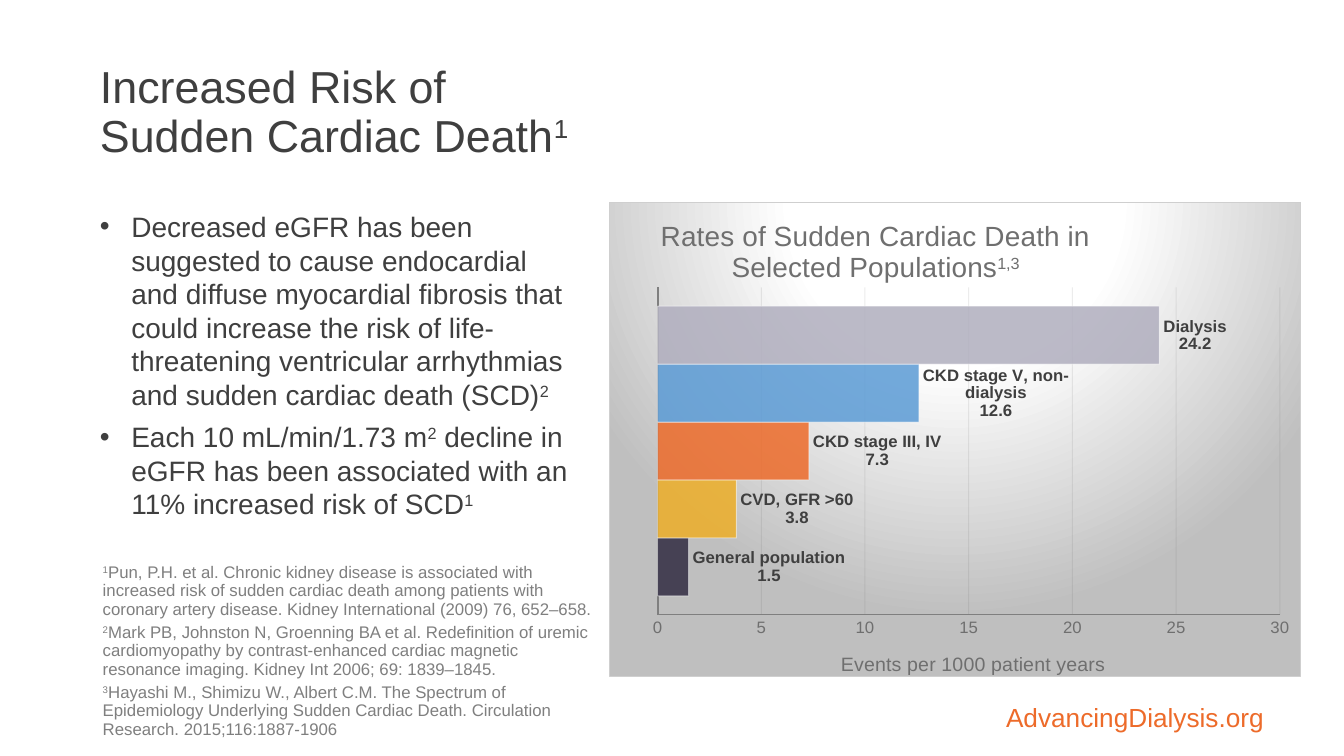
from dataclasses import dataclass

import pptx
import pptx.chart.data
import pptx.dml.color
import pptx.enum.chart
import pptx.enum.text
import pptx.oxml
import pptx.oxml.ns
import pptx.util
from lxml import etree
from pptx.util import Cm, Pt

qn = pptx.oxml.ns.qn


@dataclass(frozen=True)
class Theme:
    face: str = "Arial"
    ink: str = "3F3F3F"
    muted: str = "7F7F7F"
    axis_ink: str = "6F6F6F"
    accent: str = "ED6B2A"
    grid: str = "494949"
    frame: str = "CFCFCF"
    white: str = "FFFFFF"
    shade: str = "BFBFBF"
    title_size: float = 32
    body_size: float = 20
    site_size: float = 18.7
    axis_title_size: float = 14
    small_size: float = 12


THEME = Theme()
ALIGN = pptx.enum.text.PP_ALIGN
ANCHOR = pptx.enum.text.MSO_ANCHOR

TITLE = ["Increased Risk of\nSudden Cardiac Death^1^"]
POINTS = [
    "Decreased eGFR has been suggested to cause endocardial and diffuse myocardial fibrosis "
    "that could increase the risk of life-threatening ventricular arrhythmias and sudden "
    "cardiac death (SCD)^2^",
    "Each 10 mL/min/1.73 m^2^ decline in eGFR has been associated with an 11% increased risk "
    "of SCD^1^",
]
REFERENCES = [
    "^1^Pun, P.H. et al. Chronic kidney disease is associated with increased risk of sudden "
    "cardiac death among patients with coronary artery disease. Kidney International (2009) "
    "76, 652–658.",
    "^2^Mark PB, Johnston N, Groenning BA et al. Redefinition of uremic cardiomyopathy by "
    "contrast-enhanced cardiac magnetic resonance imaging. Kidney Int 2006; 69: 1839–1845.",
    "^3^Hayashi M., Shimizu W., Albert C.M. The Spectrum of Epidemiology Underlying Sudden "
    "Cardiac Death. Circulation Research. 2015;116:1887-1906",
]
RATES = [
    ("General population", 1.5, "312B42"),
    ("CVD, GFR >60", 3.8, "EDAE28"),
    ("CKD stage III, IV", 7.3, THEME.accent),
    ("CKD stage V, non-dialysis", 12.6, "5B9BD5"),
    ("Dialysis", 24.2, "B0AEBE"),
]


def apply(target, values):
    for name, value in values.items():
        setattr(target, name, value)


def style_font(font, size, color, bold=False):
    apply(font, {"name": THEME.face, "size": Pt(size), "bold": bold})
    font.color.rgb = pptx.dml.color.RGBColor.from_string(color)


def write_marked(paragraph, marked, size, color):
    """Write text in which ^...^ marks a superscript and a newline marks a line break."""
    for part_index, part in enumerate(marked.split("^")):
        for line_index, line in enumerate(part.split("\n")):
            if line_index:
                paragraph.add_line_break()
            if line:
                run = paragraph.add_run()
                run.text = line
                style_font(run.font, size, color)
                if part_index % 2:
                    run.font._element.set("baseline", "30000")


def add_bullet(paragraph, indent):
    properties = paragraph._p.get_or_add_pPr()
    properties.set("marL", str(indent))
    properties.set("indent", str(-indent))
    etree.SubElement(properties, qn("a:buFont")).set("typeface", THEME.face)
    etree.SubElement(properties, qn("a:buChar")).set("char", "•")


def add_text(slide, box, paragraphs, size, color, frame_format=None, paragraph_format=None,
             space_before=0, bullet_indent=None):
    frame = slide.shapes.add_textbox(*map(Cm, box)).text_frame
    apply(frame, {"word_wrap": True, "margin_left": Cm(0.18), "margin_right": Cm(0.18),
                  "margin_top": Cm(0.1), "margin_bottom": Cm(0.1), **(frame_format or {})})
    for index, marked in enumerate(paragraphs):
        paragraph = frame.add_paragraph() if index else frame.paragraphs[0]
        if bullet_indent:
            add_bullet(paragraph, bullet_indent)
        apply(paragraph, paragraph_format or {})
        if index and space_before:
            paragraph.space_before = Pt(space_before)
        write_marked(paragraph, marked, size, color)


def fill_solid(fill, color, alpha=None):
    fill.solid()
    fill.fore_color.rgb = pptx.dml.color.RGBColor.from_string(color)
    if alpha:
        rgb = fill.fore_color._xFill.find(qn("a:srgbClr"))
        etree.SubElement(rgb, qn("a:alpha")).set("val", str(alpha * 1000))


def style_line(line, color, width, alpha=None):
    line.width = Pt(width)
    fill_solid(line.fill, color, alpha)


def place(element, index, **fractions):
    """Fix a chart part at fractions of the chart's size."""
    for old in element.findall(qn("c:layout")):
        element.remove(old)
    layout = etree.Element(qn("c:layout"))
    manual = etree.SubElement(layout, qn("c:manualLayout"))
    modes = {"layoutTarget": "inner"} if "w" in fractions else {}
    modes.update(xMode="edge", yMode="edge")
    for tag, value in {**modes, **fractions}.items():
        etree.SubElement(manual, qn(f"c:{tag}")).set("val", str(value))
    element.insert(index, layout)


def shade_chart_area(chart):
    stops = "".join(
        f'<a:gs pos="{percent * 1000}"><a:srgbClr val="{color}"/></a:gs>'
        for percent, color in [(0, THEME.white), (39, THEME.white), (100, THEME.shade)])
    area = pptx.oxml.parse_xml(
        f'<c:spPr {pptx.oxml.ns.nsdecls("c", "a")}><a:gradFill><a:gsLst>{stops}</a:gsLst>'
        '<a:path path="circle"><a:fillToRect l="50000" t="-80000" r="50000" b="180000"/>'
        f'</a:path></a:gradFill><a:ln w="{Pt(0.75)}"><a:solidFill>'
        f'<a:srgbClr val="{THEME.frame}"/></a:solidFill></a:ln></c:spPr>')
    chart._chartSpace.find(qn("c:chart")).addnext(area)


def style_series(series, color):
    fill_solid(series.format.fill, color, alpha=85)
    style_line(series.format.line, THEME.white, 0.75, alpha=50)
    labels = series.data_labels
    apply(labels, {"show_value": True, "show_series_name": True,
                   "position": pptx.enum.chart.XL_LABEL_POSITION.OUTSIDE_END})
    style_font(labels.font, THEME.small_size, THEME.ink, bold=True)
    separator = etree.Element(qn("c:separator"))
    separator.text = "\n"
    labels._element.find(qn("c:showBubbleSize")).addnext(separator)


def style_axes(chart):
    no_tick = pptx.enum.chart.XL_TICK_MARK.NONE
    hidden = pptx.enum.chart.XL_TICK_LABEL_POSITION.NONE
    groups, events = chart.category_axis, chart.value_axis
    for axis, width in [(groups, 1.5), (events, 0.75)]:
        apply(axis, {"major_tick_mark": no_tick, "minor_tick_mark": no_tick})
        style_font(axis.tick_labels.font, THEME.small_size, THEME.axis_ink)
        style_line(axis.format.line, THEME.muted, width)
    apply(groups, {"tick_label_position": hidden, "has_major_gridlines": False})
    apply(events, {"minimum_scale": 0, "maximum_scale": 30, "major_unit": 5,
                   "has_major_gridlines": True})
    style_line(events.major_gridlines.format.line, THEME.grid, 0.75, alpha=10)
    write_marked(events.axis_title.text_frame.paragraphs[0], "Events per 1000 patient years",
                 THEME.axis_title_size, THEME.axis_ink)
    place(events.axis_title._element, 1, x=0.33, y=0.94)


def add_rates_chart(slide, box):
    data = pptx.chart.data.CategoryChartData()
    data.categories = ["1"]
    for population, rate, _ in RATES:
        data.add_series(population, [rate])
    chart = slide.shapes.add_chart(
        pptx.enum.chart.XL_CHART_TYPE.BAR_CLUSTERED, *map(Cm, box), data).chart
    chart.has_legend = False
    style_font(chart.font, 10, THEME.ink)
    shade_chart_area(chart)
    apply(chart.plots[0], {"gap_width": 65, "overlap": 0, "vary_by_categories": False})
    for series, (_, _, color) in zip(chart.plots[0].series, RATES):
        style_series(series, color)
    style_axes(chart)
    write_marked(chart.chart_title.text_frame.paragraphs[0],
                 "Rates of Sudden Cardiac Death in Selected Populations^1,3^",
                 THEME.body_size, THEME.axis_ink)
    place(chart.chart_title._element, 1, x=0.07, y=0.03)
    place(chart._chartSpace.find(qn("c:chart")).find(qn("c:plotArea")), 0,
          x=0.07, y=0.18, w=0.9, h=0.69)


def main():
    deck = pptx.Presentation()
    apply(deck, {"slide_width": Cm(33.87), "slide_height": Cm(19.05)})
    slide = deck.slides.add_slide(deck.slide_layouts[6])
    add_text(slide, (20.62, 16.92, 11.51, 1.55), ["AdvancingDialysis.org"],
             THEME.site_size, THEME.accent,
             {"vertical_anchor": ANCHOR.BOTTOM, "margin_left": Cm(0.28),
              "margin_right": Cm(0.28), "margin_top": 0, "margin_bottom": 0},
             {"alignment": ALIGN.RIGHT, "line_spacing": 0.9})
    add_text(slide, (2.34, 1.02, 21.23, 3.68), TITLE, THEME.title_size, THEME.ink,
             {"vertical_anchor": ANCHOR.MIDDLE}, {"line_spacing": 0.9})
    add_text(slide, (2.34, 5.18, 12.42, 8.56), POINTS, THEME.body_size, THEME.ink,
             paragraph_format={"space_after": Pt(6)}, bullet_indent=Cm(0.79))
    add_rates_chart(slide, (15.34, 5.08, 17.45, 12.09))
    add_text(slide, (2.41, 14.12, 12.9, 4.93), REFERENCES, THEME.small_size, THEME.muted,
             paragraph_format={"line_spacing": 0.9}, space_before=4)
    deck.save("out.pptx")


if __name__ == "__main__":
    main()
